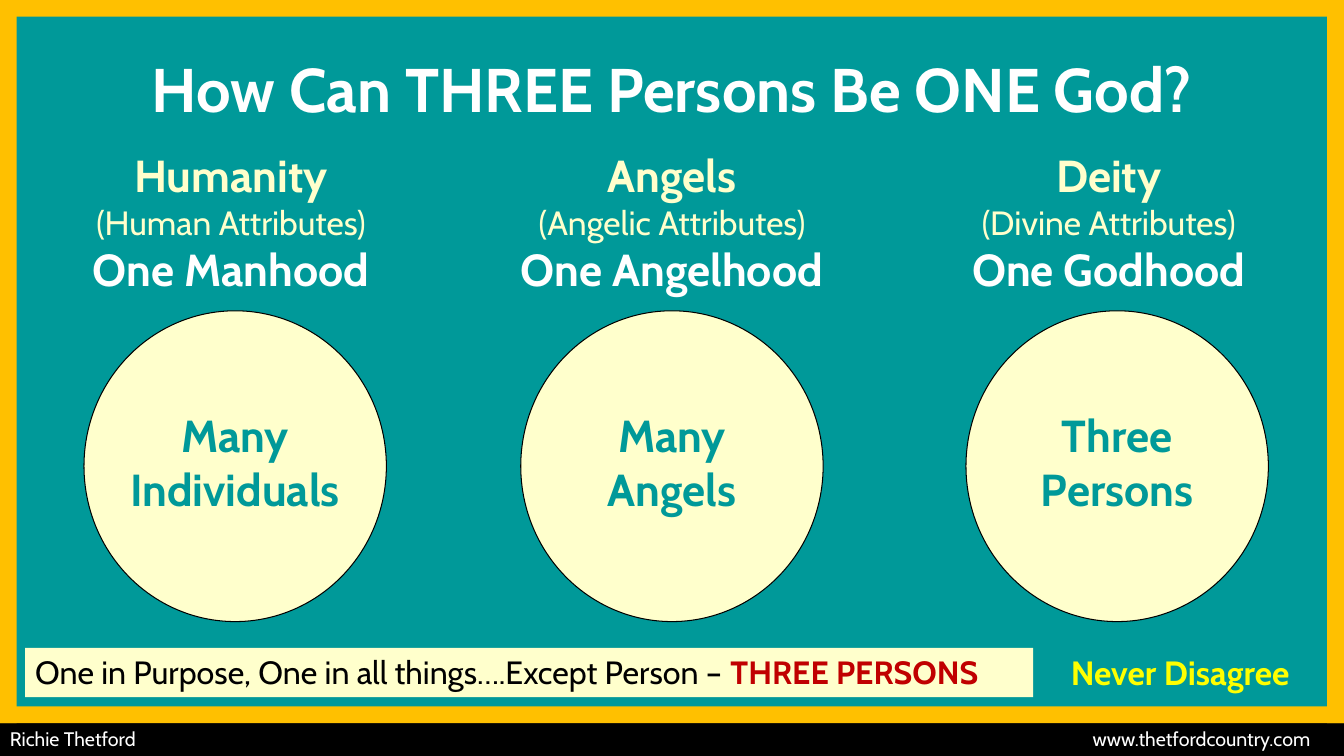
from lxml import etree
from pptx import Presentation
from pptx.dml.color import RGBColor
from pptx.enum.shapes import MSO_SHAPE
from pptx.enum.text import MSO_ANCHOR, PP_ALIGN
from pptx.oxml.ns import qn
from pptx.util import Pt

RECTANGLE, OVAL = MSO_SHAPE.RECTANGLE, MSO_SHAPE.OVAL
TOP, MIDDLE = MSO_ANCHOR.TOP, MSO_ANCHOR.MIDDLE
LEFT, CENTER = PP_ALIGN.LEFT, PP_ALIGN.CENTER

TEAL = RGBColor(0x00, 0x99, 0x99)
CREAM = RGBColor(0xFF, 0xFF, 0xCC)
GOLD = RGBColor(0xFF, 0xC0, 0x00)
YELLOW = RGBColor(0xFF, 0xFF, 0x00)
RED = RGBColor(0xC0, 0x00, 0x00)
BLACK = RGBColor(0x00, 0x00, 0x00)
WHITE = RGBColor(0xFF, 0xFF, 0xFF)

FONT = "Cabin"
SLIDE_WIDTH, SLIDE_HEIGHT = 960, 540
FRAME_HEIGHT, FRAME_THICKNESS = 516, 12

# heading centre, circle centre, label width, group, attributes, unity, members
COLUMNS = [
    (165, 168, 204, "Humanity", "(Human Attributes)", "One Manhood", "Many Individuals"),
    (480, 480, 168, "Angels", "(Angelic Attributes)", "One Angelhood", "Many Angels"),
    (792, 798, 168, "Deity", "(Divine Attributes)", "One Godhood", "Three Persons"),
]


def write(shape, paragraphs, align=CENTER, anchor=TOP):
    """Fill a shape with paragraphs, each a list of (text, size, colour, bold)."""
    frame = shape.text_frame
    frame.word_wrap = True
    frame.vertical_anchor = anchor
    for index, runs in enumerate(paragraphs):
        para = frame.paragraphs[0] if index == 0 else frame.add_paragraph()
        para.alignment = align
        for text, size, colour, bold in runs:
            span = para.add_run()
            span.text = text
            span.font.name = FONT
            span.font.size = Pt(size)
            span.font.color.rgb = colour
            span.font.bold = bold


def add_text(page, box, paragraphs, anchor=TOP):
    shape = page.shapes.add_textbox(*map(Pt, box))
    write(shape, paragraphs, anchor=anchor)


def add_block(page, kind, box, fill, outline=None):
    shape = page.shapes.add_shape(kind, *map(Pt, box))
    shape.shadow.inherit = False
    shape.fill.solid()
    shape.fill.fore_color.rgb = fill
    if outline is None:
        shape.line.fill.background()
    else:
        shape.line.color.rgb = outline
        shape.line.width = Pt(0.75)
    return shape


def add_circles(page, top):
    for _, centre, *_ in COLUMNS:
        add_block(page, OVAL, (centre - 108, top, 216, 222), CREAM, BLACK)


def add_columns(page, top):
    """Place each heading at the given top and its label inside the circle below."""
    for heading_centre, circle_centre, width, group, attributes, unity, members in COLUMNS:
        add_text(page, (circle_centre - width / 2, top + 186, width, 84),
                 [[(members, 32, TEAL, True)]])
        add_text(page, (heading_centre - 126, top, 252, 114), [
            [(group, 32, CREAM, True)],
            [(attributes, 24, CREAM, False)],
            [(unity, 32, WHITE, True)],
        ])


def add_conclusion(page, left, top, width, height):
    banner_width = 720
    add_text(page, (left + banner_width, top, width - banner_width, height),
             [[("Never Disagree", 24, YELLOW, True)]])
    banner = add_block(page, RECTANGLE, (left, top + 0.7, banner_width, height - 0.7), CREAM)
    write(banner, [[
        ("One in Purpose, One in all things….Except Person – ", 23, BLACK, False),
        ("THREE PERSONS", 23, RED, True),
    ]], LEFT)


def add_footer(page, left, top, width, height):
    """Black strip with the author at the left and the address at a right tab."""
    strip = add_block(page, RECTANGLE, (left, top, width, height), BLACK)
    write(strip, [[("Richie Thetford\twww.thetfordcountry.com", 14, WHITE, False)]], LEFT)
    properties = strip.text_frame.paragraphs[0].alignment is not None
    if properties:
        settings = strip.text_frame.paragraphs[0]._p.get_or_add_pPr()
        stops = etree.SubElement(settings, qn("a:tabLst"))
        etree.SubElement(stops, qn("a:tab"), pos=str(Pt(width - 31)), algn="r")


def add_frame(page, left, top, width, height, thickness):
    for side in (left, left + width - thickness):
        add_block(page, RECTANGLE, (side, top, thickness, height), GOLD)
    for edge in (top, top + height - thickness):
        add_block(page, RECTANGLE, (left, edge, width, thickness), GOLD)


def main():
    deck = Presentation()
    deck.slide_width, deck.slide_height = Pt(SLIDE_WIDTH), Pt(SLIDE_HEIGHT)
    page = deck.slides.add_slide(deck.slide_layouts[6])
    page.background.fill.solid()
    page.background.fill.fore_color.rgb = TEAL

    add_text(page, (12, 12, 936, 102),
             [[("How Can THREE Persons Be ONE God?", 44, WHITE, True)]], MIDDLE)
    add_circles(page, 222)
    add_columns(page, 102)
    add_conclusion(page, 18, 462, 930, 36)
    add_footer(page, 0, FRAME_HEIGHT, SLIDE_WIDTH, SLIDE_HEIGHT - FRAME_HEIGHT)
    add_frame(page, 0, 0, SLIDE_WIDTH, FRAME_HEIGHT + 0.5, FRAME_THICKNESS)
    deck.save("out.pptx")


if __name__ == "__main__":
    main()
